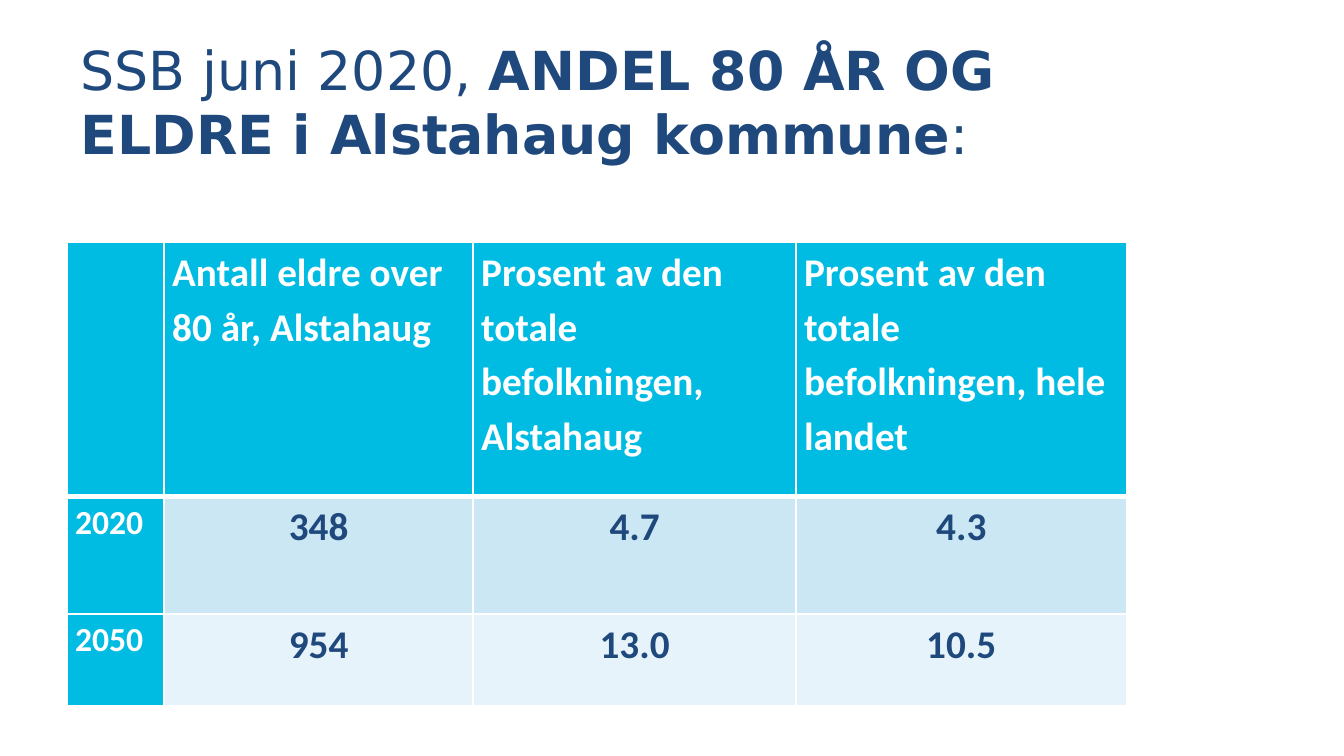
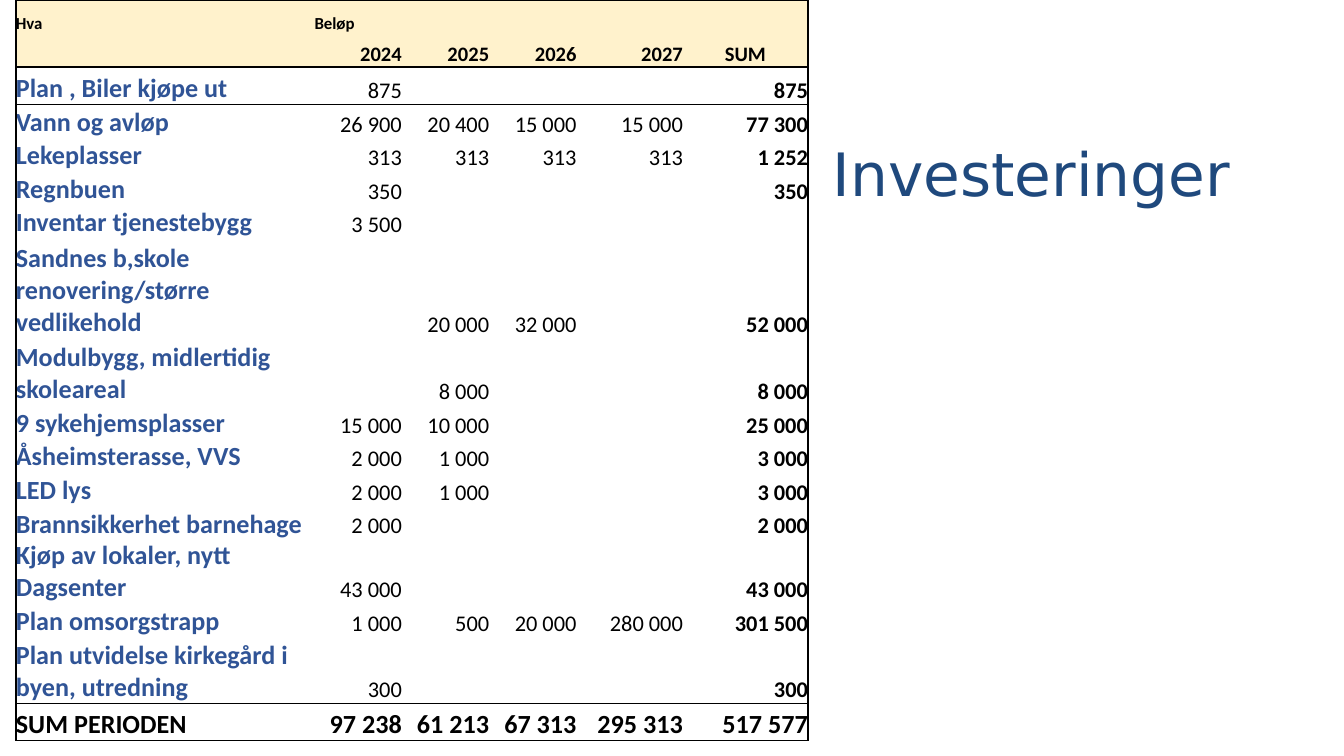
from lxml.etree import SubElement
from pptx import Presentation
from pptx.dml.color import RGBColor
from pptx.enum.text import MSO_ANCHOR, MSO_AUTO_SIZE, PP_ALIGN
from pptx.oxml.ns import qn
from pptx.util import Pt

TITLE_FONT, TABLE_FONT = "DejaVu Sans", "Calibri"
NAVY, BLUE, CYAN = "1F497D", "305496", "00BCE2"
WHITE, BLACK, CREAM = "FFFFFF", "000000", "FFF2CC"
BAND_FILLS = ["CCE7F4", "E7F3FA"]
PLAIN_TABLE_STYLE = "{2D5ABB26-0587-4C30-8999-92F81FD0307C}"

POPULATION = [
    ["", "Antall eldre over 80 år, Alstahaug",
     "Prosent av den totale befolkningen, Alstahaug",
     "Prosent av den totale befolkningen, hele landet"],
    ["2020", "348", "4.7", "4.3"],
    ["2050", "954", "13.0", "10.5"],
]

INVESTMENTS = [
    ["Hva", "Beløp", "", "", "", ""],
    ["", "2024", "2025", "2026", "2027", "SUM"],
    ["Plan , Biler kjøpe ut", "875", "", "", "", "875"],
    ["Vann og avløp", "26 900", "20 400", "15 000", "15 000", "77 300"],
    ["Lekeplasser", "313", "313", "313", "313", "1 252"],
    ["Regnbuen", "350", "", "", "", "350"],
    ["Inventar tjenestebygg", "3 500", "", "", "", ""],
    ["Sandnes b,skole renovering/større vedlikehold", "", "20 000", "32 000", "", "52 000"],
    ["Modulbygg, midlertidig skoleareal", "", "8 000", "", "", "8 000"],
    ["9 sykehjemsplasser", "15 000", "10 000", "", "", "25 000"],
    ["Åsheimsterasse, VVS", "2 000", "1 000", "", "", "3 000"],
    ["LED lys", "2 000", "1 000", "", "", "3 000"],
    ["Brannsikkerhet barnehage", "2 000", "", "", "", "2 000"],
    ["Kjøp av lokaler, nytt Dagsenter", "43 000", "", "", "", "43 000"],
    ["Plan omsorgstrapp", "1 000", "500", "20 000", "280 000", "301 500"],
    ["Plan utvidelse kirkegård i byen, utredning", "300", "", "", "", "300"],
    ["SUM PERIODEN", "97 238", "61 213", "67 313", "295 313", "517 577"],
]


def color(hex_value):
    return RGBColor.from_string(hex_value)


def style_font(font, name, size, hex_value, bold=False):
    font.name, font.size, font.bold = name, Pt(size), bold
    font.color.rgb = color(hex_value)


def add_title(page, box, size, spans):
    """Fill the title with (text, bold) spans, closed by a line break."""
    title = page.shapes.title
    title.left, title.top, title.width, title.height = map(Pt, box)
    frame = title.text_frame
    frame.word_wrap = True
    frame.auto_size = MSO_AUTO_SIZE.NONE
    frame.vertical_anchor = MSO_ANCHOR.MIDDLE
    para = frame.paragraphs[0]
    para.alignment = PP_ALIGN.LEFT
    style_font(para.font, TITLE_FONT, size, NAVY)
    for text, bold in spans:
        span = para.add_run()
        span.text = text
        span.font.bold = bold
    para.add_line_break()


def add_plain_table(page, left, top, widths, heights):
    frame = page.shapes.add_table(len(heights), len(widths), Pt(left), Pt(top),
                                  Pt(sum(widths)), Pt(sum(heights)))
    for style in frame.element.iter(qn("a:tableStyleId")):
        style.text = PLAIN_TABLE_STYLE
    table = frame.table
    table.first_row = table.horz_banding = False
    for column, width in zip(table.columns, widths):
        column.width = Pt(width)
    for row, height in zip(table.rows, heights):
        row.height = Pt(height)
    return table


def set_borders(cell, hex_value, edges):
    """Draw the edges, a dict from L, R, T or B to line width."""
    properties = cell._tc.get_or_add_tcPr()
    for side in "LRTB":
        if side in edges:
            line = SubElement(properties, qn(f"a:ln{side}"), w=str(Pt(edges[side])))
            fill = SubElement(line, qn("a:solidFill"))
            SubElement(fill, qn("a:srgbClr"), val=hex_value)


def fill_cell(cell, text, size, hex_value, bold, alignment, anchor, side_inset=0):
    cell.margin_left = cell.margin_right = Pt(side_inset)
    cell.margin_top = cell.margin_bottom = 0
    cell.vertical_anchor = anchor
    para = cell.text_frame.paragraphs[0]
    para.alignment = alignment
    style_font(para.font, TABLE_FONT, size, hex_value, bold)
    if text:
        para.add_run().text = text
    return para


def paint_cell(cell, hex_value):
    cell.fill.solid()
    cell.fill.fore_color.rgb = color(hex_value)


def add_population_table(page, left, top):
    table = add_plain_table(page, left, top, [52, 165.5, 173, 177], [136, 63, 49])
    for i, values in enumerate(POPULATION):
        for j, text in enumerate(values):
            cell = table.cell(i, j)
            is_value = i > 0 and j > 0
            para = fill_cell(cell, text, 18 if i and not j else 21,
                             NAVY if is_value else WHITE, True,
                             PP_ALIGN.CENTER if is_value else PP_ALIGN.LEFT,
                             MSO_ANCHOR.TOP, 4.3)
            para.line_spacing = 1.14
            para.space_after = Pt(9)
            set_borders(cell, WHITE, {"L": 1, "R": 1, "T": 3 if i == 1 else 1,
                                      "B": 3 if i == 0 else 1})
            paint_cell(cell, BAND_FILLS[i - 1] if is_value else CYAN)


def investment_style(i, j, last_row, last_column):
    """Return size, colour, bold and alignment for one cell."""
    alignment = PP_ALIGN.RIGHT if j else PP_ALIGN.LEFT
    if i == 0:
        return 9, BLACK, True, PP_ALIGN.LEFT
    if i == 1:
        return 11, BLACK, True, PP_ALIGN.CENTER if j == last_column else alignment
    if i == last_row:
        return 14, BLACK, True, alignment
    if j == 0:
        return 14, BLUE, True, alignment
    return 12, BLACK, j == last_column, alignment


def add_investment_table(page, left, top):
    tall_rows = {2: 20, 7: 53.3, 8: 36, 13: 33, 15: 35.3, 16: 20}
    heights = [tall_rows.get(i, 18) for i in range(len(INVESTMENTS))]
    table = add_plain_table(page, left, top, [160, 46.8, 46.8, 46.8, 57, 67], heights)
    last_row, last_column = len(INVESTMENTS) - 1, len(INVESTMENTS[0]) - 1
    # Rules around the table, below the header and above the total
    row_edges = {0: {"T": 1}, 1: {"B": 1}, 2: {"T": 1},
                 last_row - 1: {"B": 0.5}, last_row: {"T": 0.5, "B": 1}}
    column_edges = {0: {"L": 1}, last_column: {"R": 1}}
    for i, values in enumerate(INVESTMENTS):
        for j, text in enumerate(values):
            cell = table.cell(i, j)
            fill_cell(cell, text, *investment_style(i, j, last_row, last_column),
                      MSO_ANCHOR.BOTTOM)
            set_borders(cell, BLACK, row_edges.get(i, {}) | column_edges.get(j, {}))
            if i < 2:
                paint_cell(cell, CREAM)


def add_population_page(deck):
    page = deck.slides.add_slide(deck.slide_layouts[5])
    add_title(page, (36, 37.5, 545, 67.5), 28.8, [
        ("SSB juni 2020, ", False),
        ("ANDEL 80 ÅR OG ELDRE i Alstahaug kommune", True),
        (":", False)])
    add_population_table(page, 36, 130)


def add_investment_page(deck):
    page = deck.slides.add_slide(deck.slide_layouts[5])
    add_title(page, (439, 66, 232.5, 91), 32, [("Investeringer", False)])
    add_investment_table(page, 8.5, 0)


def main():
    deck = Presentation()
    deck.slide_width, deck.slide_height = Pt(720), Pt(405)
    add_population_page(deck)
    add_investment_page(deck)
    deck.save("out.pptx")


if __name__ == "__main__":
    main()
